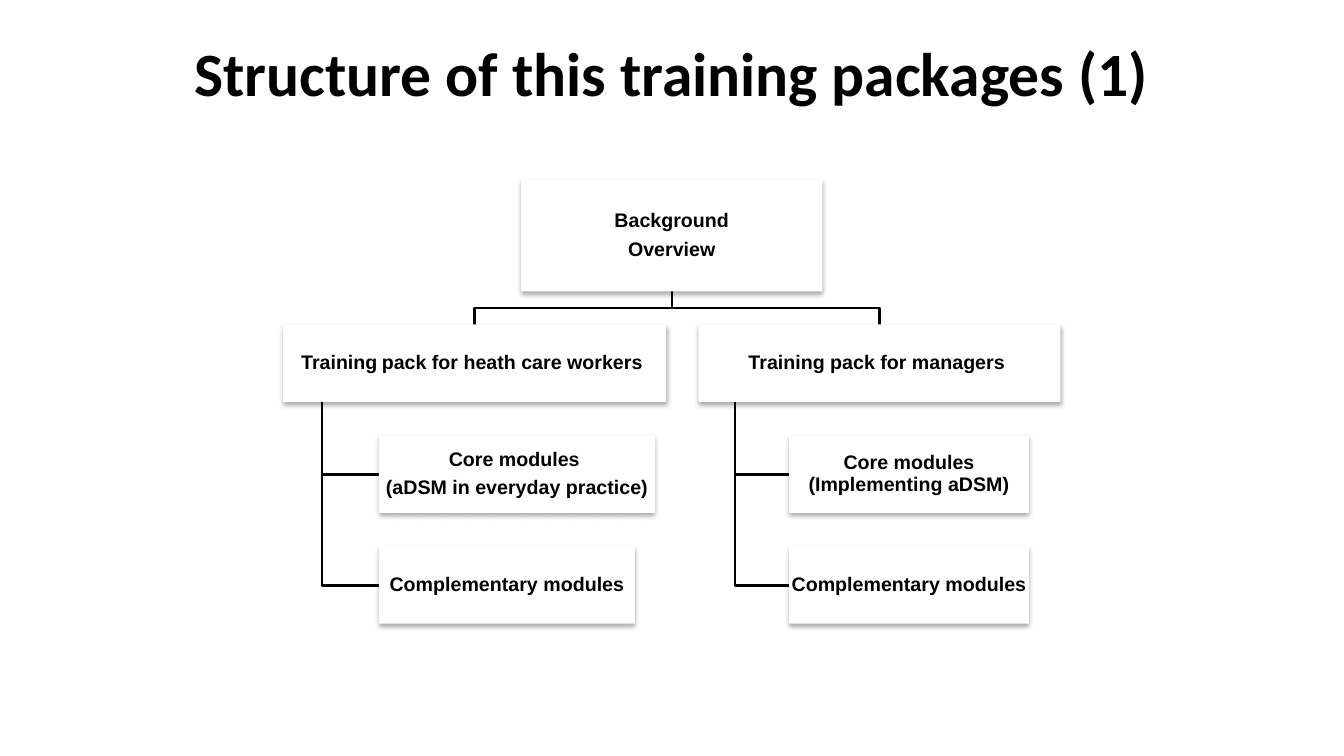
"""Build the slide that shows the structure of the training packages."""
from lxml import etree
from pptx import Presentation
from pptx import util as u
from pptx.dml.color import RGBColor
from pptx.enum import shapes, text
from pptx.oxml.ns import qn

COLORS = {"ink": "000000", "paper": "FFFFFF"}
ROOT = (372.2, 128.2, 215.3, 79.9)
PACK_TOP, BOX_HEIGHT, ROW_GAP = 231.8, 55.4, 23.8
PACKS = [
    (202.3, 273.6,
     [[("Training", {}), (" ", {"size": 11, "bold": False}),
       ("pack for heath care workers ", {})]],
     [(197.3, [[("Core modules ", {})], [("(aDSM in everyday practice)", {})]]),
      (182.9, [[("Complementary modules", {})]])]),
    (499, 258.5,
     [[("Training pack for managers ", {})]],
     [(171.4, [[("Core modules (Implementing aDSM)", {})]]),
      (171.4, [[("Complementary modules", {})]])]),
]


def color(name):
    return RGBColor.from_string(COLORS[name])


def add_span(para, words, size=14, bold=True, font="Arial"):
    span = para.add_run()
    span.text = words
    span.font.size = u.Pt(size)
    span.font.bold = bold
    span.font.name = font
    span.font.color.rgb = color("ink")


def add_shadow(box):
    box.shadow.inherit = False
    effects = box._element.spPr.find(qn("a:effectLst"))
    shadow = etree.SubElement(effects, qn("a:outerShdw"), blurRad=str(u.Pt(3.5)),
                              dist=str(u.Pt(2.2)), dir="5400000", rotWithShape="0")
    tint = etree.SubElement(shadow, qn("a:srgbClr"), val=COLORS["ink"])
    etree.SubElement(tint, qn("a:alpha"), val="32000")


def add_box(page, place, paragraphs):
    box = page.shapes.add_shape(shapes.MSO_SHAPE.RECTANGLE, *map(u.Pt, place))
    box.fill.solid()
    box.fill.fore_color.rgb = color("paper")
    box.line.fill.background()
    add_shadow(box)
    frame = box.text_frame
    frame.word_wrap = True
    frame.vertical_anchor = text.MSO_ANCHOR.MIDDLE
    frame.margin_left = frame.margin_right = u.Pt(1)
    frame.margin_top = frame.margin_bottom = u.Pt(1)
    for index, spans in enumerate(paragraphs):
        para = frame.add_paragraph() if index else frame.paragraphs[0]
        para.alignment = text.PP_ALIGN.CENTER
        para.line_spacing = 0.9
        para.space_after = u.Pt(5.5)
        for words, style in spans:
            add_span(para, words, **style)


def add_elbow(page, start, *corners):
    builder = page.shapes.build_freeform(*start, scale=u.Pt(1))
    builder.add_line_segments(corners, close=False)
    elbow = builder.convert_to_shape()
    elbow.fill.background()
    elbow.line.color.rgb = color("ink")
    elbow.line.width = u.Pt(2)
    elbow.shadow.inherit = False


def add_title(page, words):
    title = page.shapes.title
    title.left, title.top, title.width, title.height = map(u.Pt, (120, 21, 720, 60.6))
    frame = title.text_frame
    frame.auto_size = text.MSO_AUTO_SIZE.NONE
    frame.vertical_anchor = text.MSO_ANCHOR.MIDDLE
    para = frame.paragraphs[0]
    para.alignment = text.PP_ALIGN.CENTER
    add_span(para, words, size=44, font="Calibri")


def add_pack(page, left, width, label, modules):
    root_x, root_bottom = ROOT[0] + ROOT[2] / 2, ROOT[1] + ROOT[3]
    bus_y = (root_bottom + PACK_TOP) / 2
    middle, trunk, indent = (left + width * share for share in (0.5, 0.1, 0.25))
    add_elbow(page, (root_x, root_bottom), (root_x, bus_y),
              (middle, bus_y), (middle, PACK_TOP))
    add_box(page, (left, PACK_TOP, width, BOX_HEIGHT), label)
    for row, (module_width, module) in enumerate(modules, 1):
        top = PACK_TOP + row * (BOX_HEIGHT + ROW_GAP)
        center = top + BOX_HEIGHT / 2
        add_elbow(page, (trunk, PACK_TOP + BOX_HEIGHT), (trunk, center), (indent, center))
        add_box(page, (indent, top, module_width, BOX_HEIGHT), module)


def main():
    deck = Presentation()
    deck.slide_width, deck.slide_height = u.Pt(960), u.Pt(540)
    page = deck.slides.add_slide(deck.slide_layouts[5])
    add_title(page, "Structure of this training packages (1)")
    for pack in PACKS:
        add_pack(page, *pack)
    add_box(page, ROOT, [[("Background", {})], [("Overview", {})]])
    deck.save("out.pptx")


if __name__ == "__main__":
    main()
